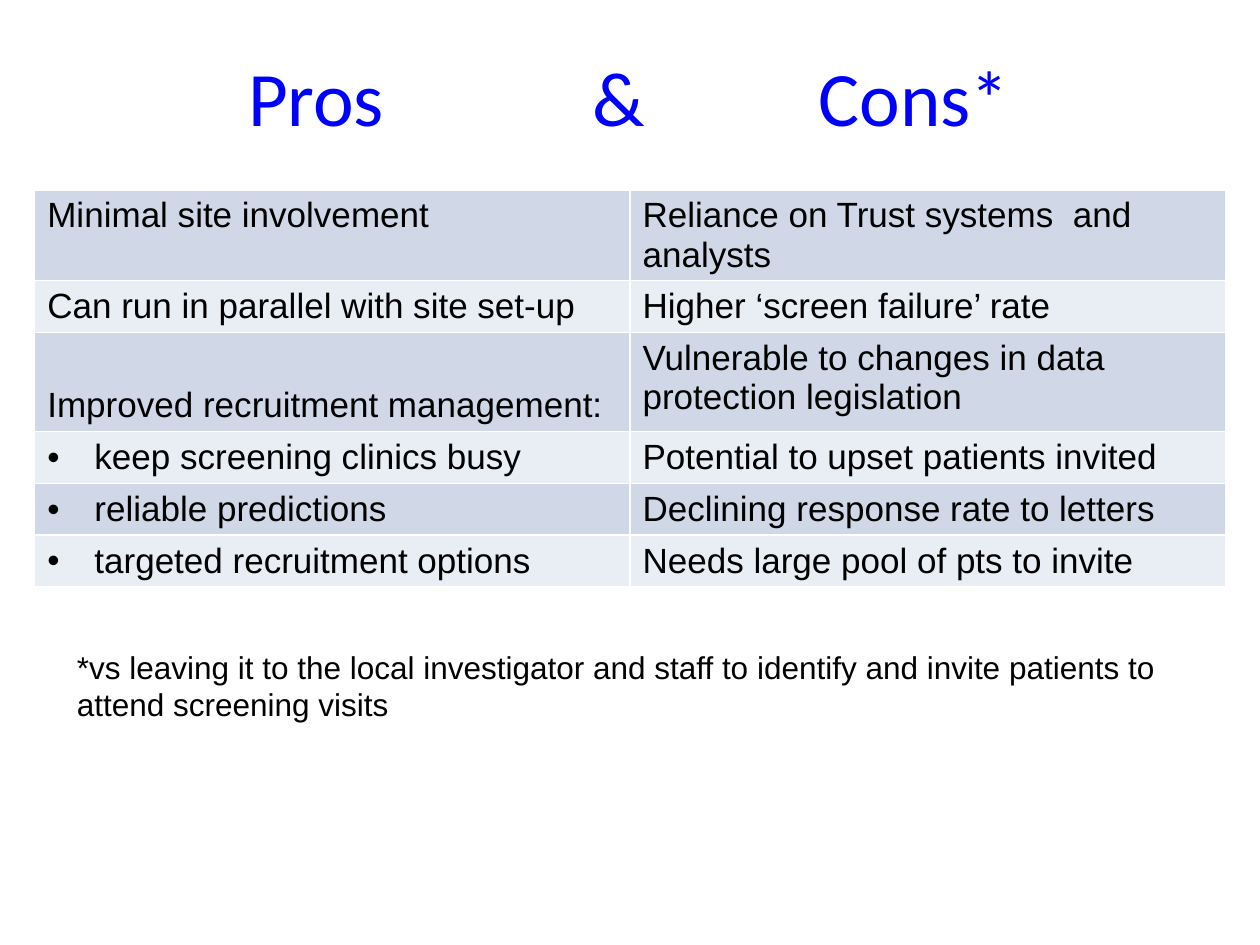
from lxml import etree
from pptx import Presentation
from pptx.dml.color import RGBColor
from pptx.enum.text import MSO_ANCHOR, PP_ALIGN
from pptx.oxml.ns import qn
from pptx.util import Cm, Pt

LEFT = PP_ALIGN.LEFT
MIDDLE, BOTTOM = MSO_ANCHOR.MIDDLE, MSO_ANCHOR.BOTTOM
BLUE = RGBColor(0x00, 0x00, 0xFF)
BLACK = RGBColor(0x00, 0x00, 0x00)
BANDS = [RGBColor(0xD0, 0xD8, 0xE8), RGBColor(0xE9, 0xED, 0xF4)]

ROWS = [
    ("Minimal site involvement", "Reliance on Trust systems  and analysts"),
    ("Can run in parallel with site set-up", "Higher ‘screen failure’ rate"),
    ("Improved recruitment management:",
     "Vulnerable to changes in data protection legislation"),
    ("keep screening clinics busy", "Potential to upset patients invited"),
    ("reliable predictions", "Declining response rate to letters"),
    ("targeted recruitment options", "Needs large pool of pts to invite"),
]
HEADING_ROW = 2


def style(p, font, size, color):
    for r in p.runs:
        r.font.name = font
        r.font.size = Pt(size)
        r.font.color.rgb = color


def add_bullet(p):
    pPr = p._p.get_or_add_pPr()
    pPr.set("marL", str(Cm(0.95)))
    pPr.set("indent", str(-Cm(0.95)))
    etree.SubElement(pPr, qn("a:buFont"), typeface="Arial")
    etree.SubElement(pPr, qn("a:buChar"), char="•")


prs = Presentation()
prs.slide_width, prs.slide_height = Cm(25.4), Cm(19.05)
s = prs.slides.add_slide(prs.slide_layouts[5])

title = s.shapes.title
title.left, title.top, title.width, title.height = Cm(1.3), Cm(0.33), Cm(22.86), Cm(3.18)
tf = title.text_frame
tf.text = "Pros\t&\tCons*"
tf.vertical_anchor = MIDDLE
tf.margin_left = Cm(3.7)
p = tf.paragraphs[0]
p.alignment = LEFT
style(p, "Calibri", 44, BLUE)
tabs = etree.SubElement(p._p.get_or_add_pPr(), qn("a:tabLst"))
for pos in (6.95, 11.5):
    etree.SubElement(tabs, qn("a:tab"), pos=str(Cm(pos)), algn="l")

table = s.shapes.add_table(len(ROWS), 2, Cm(0.7), Cm(3.83), Cm(24), Cm(7.2)).table
table.first_row = False
for i, texts in enumerate(ROWS):
    table.rows[i].height = Cm(2 if i == HEADING_ROW else 1.04)
    for j, text in enumerate(texts):
        cell = table.cell(i, j)
        cell.fill.solid()
        cell.fill.fore_color.rgb = BANDS[i % 2]
        cell.text_frame.text = text
        p = cell.text_frame.paragraphs[0]
        style(p, "Arial", 20, BLACK)
        if j == 0 and i > HEADING_ROW:
            add_bullet(p)
table.cell(HEADING_ROW, 0).vertical_anchor = BOTTOM

sp = s.shapes.add_textbox(Cm(1.3), Cm(12.93), Cm(22.6), Cm(1.8))
tf = sp.text_frame
tf.word_wrap = True
tf.text = ("*vs leaving it to the local investigator and staff to identify "
           "and invite patients to attend screening visits")
style(tf.paragraphs[0], "Arial", 18, BLACK)

prs.save("out.pptx")
